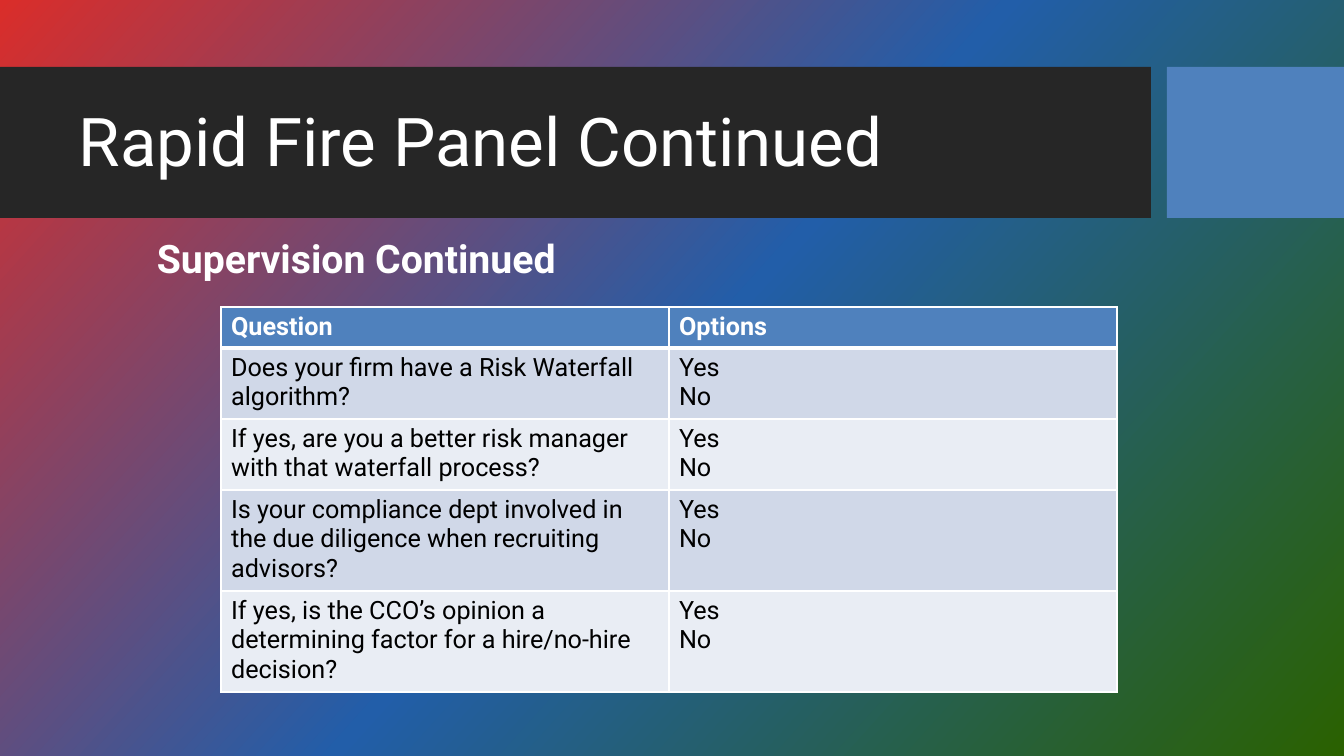
from copy import deepcopy
from typing import Any, NamedTuple

from lxml import etree
from pptx import Presentation, util as u
from pptx.dml.color import RGBColor
from pptx.enum import shapes, text
from pptx.oxml import ns

EMU_PER_PX = 914400 / 100.8
FONT = "Roboto"
COLOURS = {
    "white": "FFFFFF", "black": "000000", "charcoal": "262626",
    "accent": "4F81BD", "band_dark": "D0D8E8", "band_light": "E9EDF4",
}
BACKDROP_STOPS = [(0.0, "DA2D2A"), (0.5, "225EA9"), (1.0, "2A6100")]
BACKDROP_ANGLE = 42
LINE_PX, CELL_PADDING_PX = 30, 11


class Box(NamedTuple):
    left: int
    top: int
    width: int
    height: int


class Bar(NamedTuple):
    box: Box
    colour: str


class Label(NamedTuple):
    box: Box
    words: str
    frame: dict[str, Any]
    paragraph: dict[str, Any]
    font: dict[str, Any]


class Question(NamedTuple):
    wording: str
    options: str
    lines: int


BARS = [
    Bar(Box(0, 67, 1151, 151), "charcoal"),
    Bar(Box(1167, 67, 177, 151), "accent"),
]
LABELS = [
    Label(Box(69, 94, 1082, 101), "Rapid Fire Panel Continued",
          {"vertical_anchor": text.MSO_ANCHOR.MIDDLE}, {"line_spacing": 0.9},
          {"size": u.Pt(48)}),
    Label(Box(147, 229, 1174, 57), "Supervision Continued",
          {}, {}, {"size": u.Pt(28), "bold": True}),
]
TABLE_LEFT, TABLE_TOP, COLUMN_WIDTH = 221, 307, 448
QUESTIONS = [
    Question("Question", "Options", 1),
    Question("Does your firm have a Risk Waterfall algorithm?", "Yes\nNo", 2),
    Question("If yes, are you a better risk manager with that waterfall process?",
             "Yes\nNo", 2),
    Question("Is your compliance dept involved in the due diligence when "
             "recruiting advisors?", "Yes\nNo", 3),
    Question("If yes, is the CCO’s opinion a determining factor for a "
             "hire/no-hire decision?", "Yes\nNo", 3),
]


def px(length: int) -> int:
    return round(length * EMU_PER_PX)


def place(box: Box) -> list[int]:
    return [px(length) for length in box]


def rgb(name: str) -> RGBColor:
    return RGBColor.from_string(COLOURS[name])


def apply(target: Any, formats: dict[str, Any]) -> None:
    for attribute, value in formats.items():
        setattr(target, attribute, value)


def style_font(font: Any, colour: str, formats: dict[str, Any]) -> None:
    apply(font, {"name": FONT, **formats})
    font.color.rgb = rgb(colour)


def paint_backdrop(slide: Any) -> None:
    fill = slide.background.fill
    fill.gradient()
    fill.gradient_angle = 360 - BACKDROP_ANGLE
    first_stop = slide.element.find(".//" + ns.qn("a:gs"))
    first_stop.addnext(deepcopy(first_stop))
    for stop, (position, colour) in zip(fill.gradient_stops, BACKDROP_STOPS):
        stop.position = position
        stop.color.rgb = RGBColor.from_string(colour)


def draw_bar(slide: Any, bar: Bar) -> None:
    band = slide.shapes.add_shape(shapes.MSO_SHAPE.RECTANGLE, *place(bar.box))
    band.shadow.inherit = False
    band.fill.solid()
    band.fill.fore_color.rgb = rgb(bar.colour)
    band.line.fill.background()


def draw_label(slide: Any, label: Label) -> None:
    frame = slide.shapes.add_textbox(*place(label.box)).text_frame
    apply(frame, {"word_wrap": True, **label.frame})
    heading = frame.paragraphs[0]
    heading.text = label.words
    apply(heading, label.paragraph)
    style_font(heading.font, "white", label.font)


def draw_borders(cell: Any, points: dict[str, int]) -> None:
    properties = cell._tc.get_or_add_tcPr()
    for index, (side, width) in enumerate(points.items()):
        edge = etree.Element(ns.qn(f"a:ln{side}"), w=str(u.Pt(width)))
        solid = etree.SubElement(edge, ns.qn("a:solidFill"))
        etree.SubElement(solid, ns.qn("a:srgbClr"), val=COLOURS["white"])
        properties.insert(index, edge)


def draw_questions(slide: Any) -> None:
    heights = [q.lines * LINE_PX + CELL_PADDING_PX for q in QUESTIONS]
    box = Box(TABLE_LEFT, TABLE_TOP, 2 * COLUMN_WIDTH, sum(heights))
    grid = slide.shapes.add_table(len(QUESTIONS), 2, *place(box)).table
    for row, (question, height) in enumerate(zip(QUESTIONS, heights)):
        grid.rows[row].height = px(height)
        is_header = row == 0
        band = "accent" if is_header else ("band_light", "band_dark")[row % 2]
        borders = {"L": 1, "R": 1, "T": 3 if row == 1 else 1,
                   "B": 3 if is_header else 1}
        for column, words in enumerate((question.wording, question.options)):
            cell = grid.cell(row, column)
            cell.fill.solid()
            cell.fill.fore_color.rgb = rgb(band)
            draw_borders(cell, borders)
            cell.text_frame.text = words
            for paragraph in cell.text_frame.paragraphs:
                style_font(paragraph.font, "white" if is_header else "black",
                           {"size": u.Pt(18), "bold": is_header})


def main() -> None:
    deck = Presentation()
    apply(deck, {"slide_width": px(1344), "slide_height": px(756)})
    slide = deck.slides.add_slide(deck.slide_layouts[6])

    # Backdrop and title band
    paint_backdrop(slide)
    for bar in BARS:
        draw_bar(slide, bar)

    # Title and section heading
    for label in LABELS:
        draw_label(slide, label)

    # Panel questions
    draw_questions(slide)
    deck.save("out.pptx")


if __name__ == "__main__":
    main()
